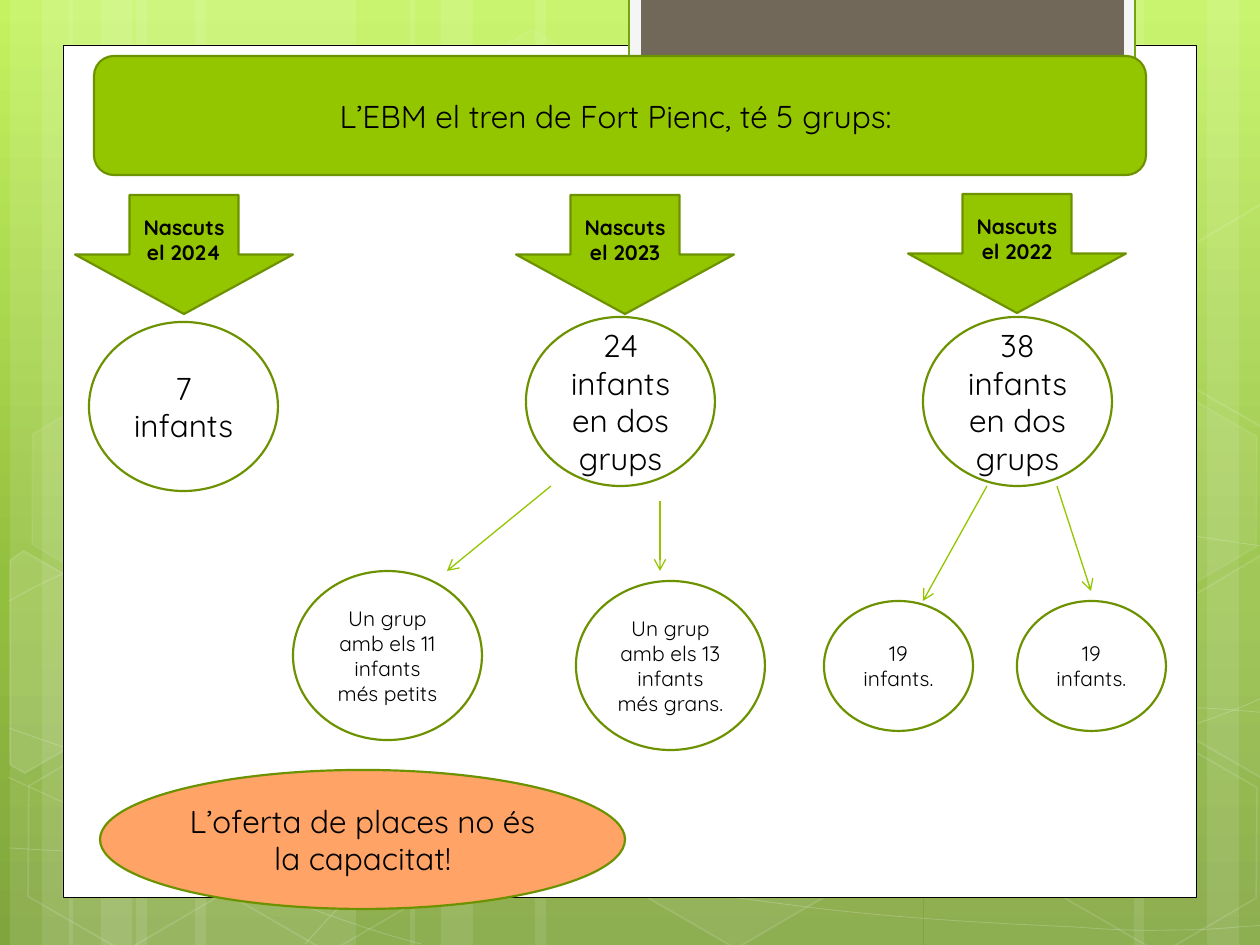
from copy import deepcopy
from dataclasses import dataclass
from typing import NamedTuple, Optional

from lxml import etree
from pptx import Presentation
from pptx import util as u
from pptx.dml import color
from pptx.enum import shapes, text
from pptx.oxml import ns

EMU_PER_PX = u.Inches(1) / 126
KIND = shapes.MSO_SHAPE


@dataclass(frozen=True)
class Theme:
    font: str = "Quicksand"
    large: int = 18
    small: int = 12
    outline: float = 1.25
    hair: float = 0.5
    green: str = "94C600"
    dark_green: str = "6D9200"
    tab_green: str = "74A510"
    orange: str = "FFA466"
    white: str = "FFFFFF"
    black: str = "000000"
    pale: str = "F5F5F5"
    brown: str = "71685A"
    backdrop: tuple = (("C3F35F", 0), ("93BF3F", 0.62), ("81A53E", 1))


THEME = Theme()


class Box(NamedTuple):
    x: int
    y: int
    w: int
    h: int


class Style(NamedTuple):
    fill: Optional[str] = None
    line: Optional[str] = None
    width: float = THEME.outline
    fill_alpha: int = 100
    line_alpha: int = 100


class Node(NamedTuple):
    kind: KIND
    box: Box
    label: str
    size: int
    fill: Optional[str] = None
    bold: bool = False


class Hexagon(NamedTuple):
    x: int
    y: int
    fill_alpha: int
    line_alpha: int


class CutHexagon(NamedTuple):
    x: int
    y: int
    corners: list
    fill_alpha: int


class Arrow(NamedTuple):
    start: tuple
    end: tuple


def px(value: float) -> int:
    return round(value * EMU_PER_PX)


def rgb(value: str) -> color.RGBColor:
    return color.RGBColor.from_string(value)


def fade(properties, where: str, percent: int) -> None:
    if percent < 100:
        tone = properties.find(where + ns.qn("a:solidFill") + "/" + ns.qn("a:srgbClr"))
        etree.SubElement(tone, ns.qn("a:alpha"), val=str(percent * 1000))


def paint(shape, style: Style) -> None:
    shape.shadow.inherit = False
    properties = shape._element.spPr
    if style.fill and style.fill_alpha:
        shape.fill.solid()
        shape.fill.fore_color.rgb = rgb(style.fill)
        fade(properties, "", style.fill_alpha)
    else:
        shape.fill.background()
    if style.line:
        shape.line.color.rgb = rgb(style.line)
        shape.line.width = u.Pt(style.width)
        fade(properties, ns.qn("a:ln") + "/", style.line_alpha)
    else:
        shape.line.fill.background()


def draw_box(slide, kind: KIND, box: Box, style: Style):
    shape = slide.shapes.add_shape(kind, *map(px, box))
    paint(shape, style)
    return shape


def draw_node(slide, node: Node) -> None:
    shape = draw_box(slide, node.kind, node.box, Style(node.fill, THEME.dark_green))
    frame = shape.text_frame
    frame.word_wrap = True
    frame.vertical_anchor = text.MSO_ANCHOR.MIDDLE
    paragraph = frame.paragraphs[0]
    paragraph.text = node.label
    paragraph.alignment = text.PP_ALIGN.CENTER
    paragraph.font.name = THEME.font
    paragraph.font.size = u.Pt(node.size)
    paragraph.font.bold = node.bold
    paragraph.font.color.rgb = rgb(THEME.black)


def draw_outline(slide, points: list, closed: bool, style: Style):
    builder = slide.shapes.build_freeform(*points[0], scale=EMU_PER_PX)
    builder.add_line_segments(points[1:], close=closed)
    outline = builder.convert_to_shape()
    paint(outline, style)
    return outline


def draw_wave(slide, controls: list) -> None:
    wave = draw_outline(slide, controls, False,
                        Style(line=THEME.white, width=THEME.hair, line_alpha=20))
    route = wave._element.find(".//" + ns.qn("a:path"))
    segments = route.findall(ns.qn("a:lnTo"))
    for i in range(0, len(segments), 3):
        bend = etree.SubElement(route, ns.qn("a:cubicBezTo"))
        for segment in segments[i:i + 3]:
            bend.append(segment[0])
            route.remove(segment)


def draw_arrow(slide, arrow: Arrow) -> None:
    connector = slide.shapes.add_connector(
        shapes.MSO_CONNECTOR.STRAIGHT, *map(px, arrow.start + arrow.end))
    connector.line.color.rgb = rgb(THEME.green)
    connector.line.width = u.Pt(0.75)
    properties = connector._element.spPr
    etree.SubElement(properties.find(ns.qn("a:ln")), ns.qn("a:tailEnd"), type="arrow")
    etree.SubElement(properties, ns.qn("a:effectLst"))


def draw_backdrop(slide) -> None:
    fill = slide.background.fill
    fill.gradient()
    fill.gradient_angle = 270
    stop_list = slide._element.find(".//" + ns.qn("a:gsLst"))
    stop_list.append(deepcopy(stop_list[-1]))
    for stop, (tone, position) in zip(fill.gradient_stops, THEME.backdrop):
        stop.color.rgb = rgb(tone)
        stop.position = position


BANDS = [(136, 220), (10, 63), (42, 105), (195, 220), (69, 63), (101, 105),
         (924, 220), (1207, 63), (1134, 105), (535, 388), (410, 63), (441, 105)]
WAVES = [
    [(9, 848), (77, 852), (145, 856), (239, 854), (334, 853), (451, 851), (577, 838),
     (703, 825), (882, 801), (998, 777), (1113, 753), (1231, 716), (1269, 694)],
    [(9, 601), (45, 581), (82, 562), (152, 543), (224, 521), (326, 496), (437, 488),
     (549, 479), (685, 478), (824, 488), (963, 498), (1193, 537), (1269, 547)],
    [(8, 777), (160, 847), (311, 916), (421, 944)],
    [(9, 728), (48, 742), (88, 756), (161, 776), (234, 795), (344, 827), (450, 848),
     (554, 869), (687, 892), (791, 905), (896, 919), (1008, 924), (1075, 927),
     (1140, 932), (1158, 930), (1191, 930), (1223, 929), (1246, 926), (1269, 925)],
    [(305, 944), (328, 919), (350, 893), (381, 871), (411, 848), (454, 823), (489, 805),
     (524, 787), (546, 780), (592, 767), (638, 755), (722, 737), (766, 728),
     (811, 719), (818, 719), (857, 717), (896, 713), (958, 709), (1000, 708),
     (1045, 707), (1116, 708), (1116, 708), (1144, 708), (1173, 708), (1201, 708),
     (1223, 709), (1245, 711), (1256, 712), (1268, 713), (1264, 712), (1268, 713)],
]
HEXAGONS = [Hexagon(421, 45, 4, 8), Hexagon(626, 742, 6, 12), Hexagon(14, 745, 0, 12),
            Hexagon(18, 393, 7, 8), Hexagon(219, 746, 0, 12), Hexagon(949, 571, 10, 12),
            Hexagon(1051, 747, 0, 12), Hexagon(1051, 396, 7, 8)]
LEFT_CUT = [(0, 15), (7, 0), (119, 0), (174, 97), (119, 192), (102, 192)]
RIGHT_CUT = [(0, 95), (53, 0), (65, 0), (171, 182), (165, 192), (55, 192)]
CUT_HEXAGONS = [CutHexagon(-42, 578, LEFT_CUT, 10), CutHexagon(1155, 559, RIGHT_CUT, 4),
                CutHexagon(1155, 208, RIGHT_CUT, 0)]
PANELS = [
    (Box(63, 45, 1134, 853), Style(THEME.white, THEME.black, THEME.hair)),
    (Box(629, -2, 506, 96), Style(THEME.pale, THEME.tab_green)),
    (Box(641, -2, 483, 86), Style(THEME.brown)),
]
BIRTH_YEARS = [(75, 195, 2024), (516, 195, 2023), (908, 194, 2022)]
TOTALS = [(89, 322, "7 infants"), (526, 317, "24 infants en dos grups"),
          (923, 317, "38 infants en dos grups")]
GROUPS = [(Box(293, 571, 189, 169), "Un grup amb els 11 infants més petits"),
          (Box(576, 581, 189, 169), "Un grup amb els 13 infants més grans."),
          (Box(824, 601, 149, 130), "19 infants."),
          (Box(1017, 601, 149, 130), "19 infants.")]
NODES = [
    Node(KIND.ROUNDED_RECTANGLE, Box(94, 56, 1052, 119),
         "L’EBM el tren de Fort Pienc, té 5 grups: ", THEME.large, THEME.green),
    *(Node(KIND.DOWN_ARROW, Box(x, y, 218, 119), f"Nascuts el {year}",
           THEME.small, THEME.green, True) for x, y, year in BIRTH_YEARS),
    *(Node(KIND.OVAL, Box(x, y, 189, 169), label, THEME.large) for x, y, label in TOTALS),
    *(Node(KIND.OVAL, box, label, THEME.small) for box, label in GROUPS),
    Node(KIND.OVAL, Box(100, 770, 525, 139),
         "L’oferta de places no és la capacitat!", THEME.large, THEME.orange),
]
ARROWS = [Arrow((551, 486), (447, 571)), Arrow((660, 501), (660, 571)),
          Arrow((987, 486), (923, 601)), Arrow((1057, 486), (1091, 591))]


def main() -> None:
    deck = Presentation()
    deck.slide_width, deck.slide_height = px(1260), px(945)
    slide = deck.slides.add_slide(deck.slide_layouts[6])
    draw_backdrop(slide)
    for x, width in BANDS:
        draw_box(slide, KIND.RECTANGLE, Box(x, 0, width, 945), Style(THEME.white, fill_alpha=10))
    for wave in WAVES:
        draw_wave(slide, wave)
    for x, y, fill_alpha, line_alpha in HEXAGONS:
        hexagon = draw_box(slide, KIND.HEXAGON, Box(x, y, 220, 192),
                           Style(THEME.white, THEME.white, 1, fill_alpha, line_alpha))
        hexagon.adjustments[0] = 0.285
        hexagon.rotation = 30
    for x, y, corners, fill_alpha in CUT_HEXAGONS:
        cut = draw_outline(slide, [(x + dx, y + dy) for dx, dy in corners], True,
                           Style(THEME.white, THEME.white, 1, fill_alpha, 12))
        cut.rotation = 30
    for box, style in PANELS:
        draw_box(slide, KIND.RECTANGLE, box, style)
    for node in NODES:
        draw_node(slide, node)
    for arrow in ARROWS:
        draw_arrow(slide, arrow)
    deck.save("out.pptx")


if __name__ == "__main__":
    main()
